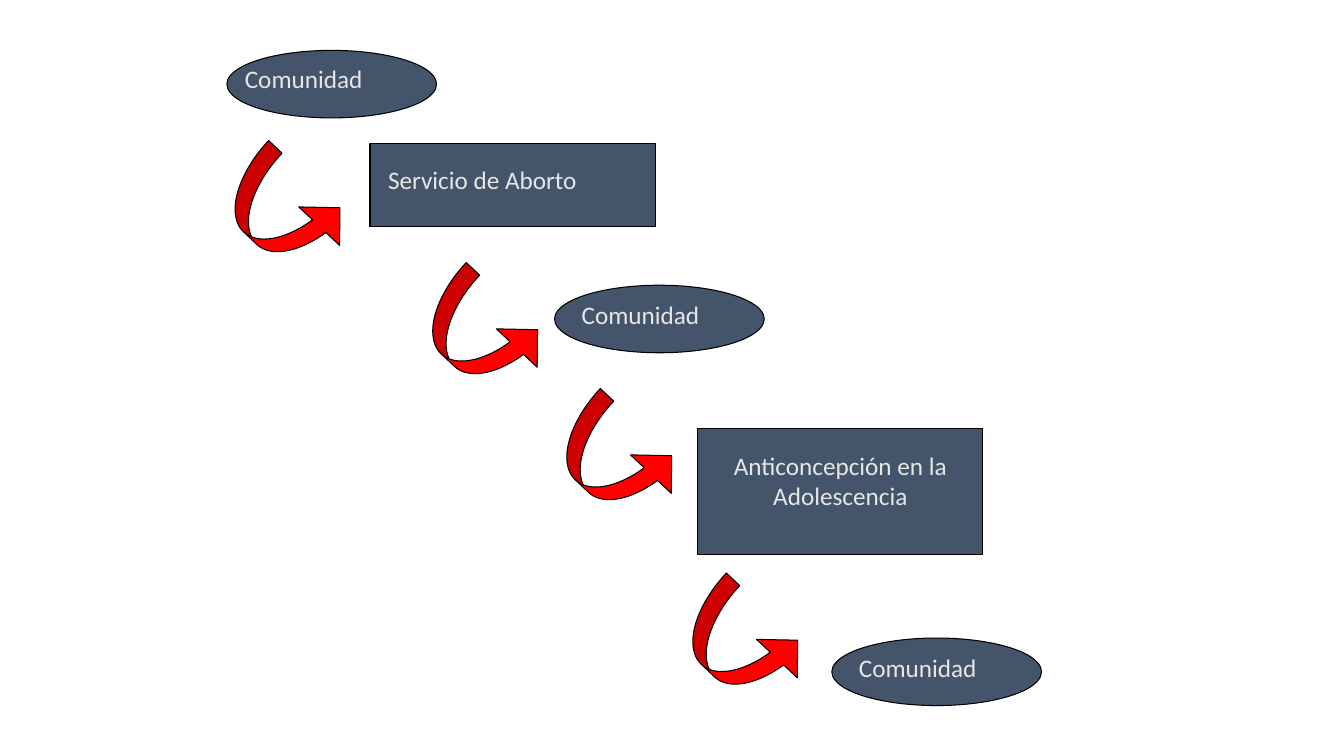
from pptx import Presentation
from pptx.dml.color import RGBColor
from pptx.enum.shapes import MSO_SHAPE
from pptx.enum.text import PP_ALIGN
from pptx.util import Inches, Pt

OVAL = MSO_SHAPE.OVAL
RECT = MSO_SHAPE.RECTANGLE
CURVE = MSO_SHAPE.CURVED_RIGHT_ARROW
LEFT = PP_ALIGN.LEFT
CENTER = PP_ALIGN.CENTER

COLORS = {"node": "44546A", "line": "000000", "text": "E7E6E6", "arrow": "FF0000"}
FONT = "Calibri"
OVAL_SIZE = (2.08, 0.67)

NODES = [
    (OVAL, (2.25, 0.5, *OVAL_SIZE), "Comunidad", (0.08, 0.08, 1.92, 0.4), LEFT),
    (RECT, (3.67, 1.42, 2.83, 0.83), "Servicio de Aborto", (0.08, 0.16, 2.75, 0.4), LEFT),
    (OVAL, (5.5, 2.83, *OVAL_SIZE), "Comunidad", (0.17, 0.09, 1.92, 0.4), LEFT),
    (RECT, (6.92, 4.25, 2.83, 1.25), "Anticoncepción en la Adolescencia",
     (0, 0.17, 2.83, 0.71), CENTER),
    (OVAL, (8.25, 6.33, *OVAL_SIZE), "Comunidad", (0.17, 0.09, 2.25, 0.4), LEFT),
]
ARROWS = [(2.42, 1.5), (4.38, 2.71), (5.71, 3.96), (6.96, 5.79)]


def color(name):
    return RGBColor.from_string(COLORS[name])


def add_form(slide, kind, box, fill):
    form = slide.shapes.add_shape(kind, *map(Inches, box))
    form.shadow.inherit = False
    form.fill.solid()
    form.fill.fore_color.rgb = color(fill)
    form.line.color.rgb = color("line")
    form.line.width = Pt(0.75)
    return form


def add_label(slide, box, text, align):
    frame = slide.shapes.add_textbox(*map(Inches, box)).text_frame
    frame.word_wrap = True
    para = frame.paragraphs[0]
    para.alignment = align
    run = para.add_run()
    run.text = text
    run.font.name = FONT
    run.font.size = Pt(18)
    run.font.color.rgb = color("text")


def add_node(slide, kind, box, text, inner, align):
    add_form(slide, kind, box, "node")
    x, y, w, h = inner
    add_label(slide, (box[0] + x, box[1] + y, w, h), text, align)


def add_arrow(slide, x, y):
    arrow = add_form(slide, CURVE, (x, y, 0.83, 1.25), "arrow")
    arrow.rotation = 313.3
    for i, value in enumerate((0.22, 0.67, 0.33)):
        arrow.adjustments[i] = value


def main():
    deck = Presentation()
    deck.slide_width = Inches(13.33)
    deck.slide_height = Inches(7.5)
    slide = deck.slides.add_slide(deck.slide_layouts[6])
    for node in NODES:
        add_node(slide, *node)
    for spot in ARROWS:
        add_arrow(slide, *spot)
    deck.save("out.pptx")


if __name__ == "__main__":
    main()
